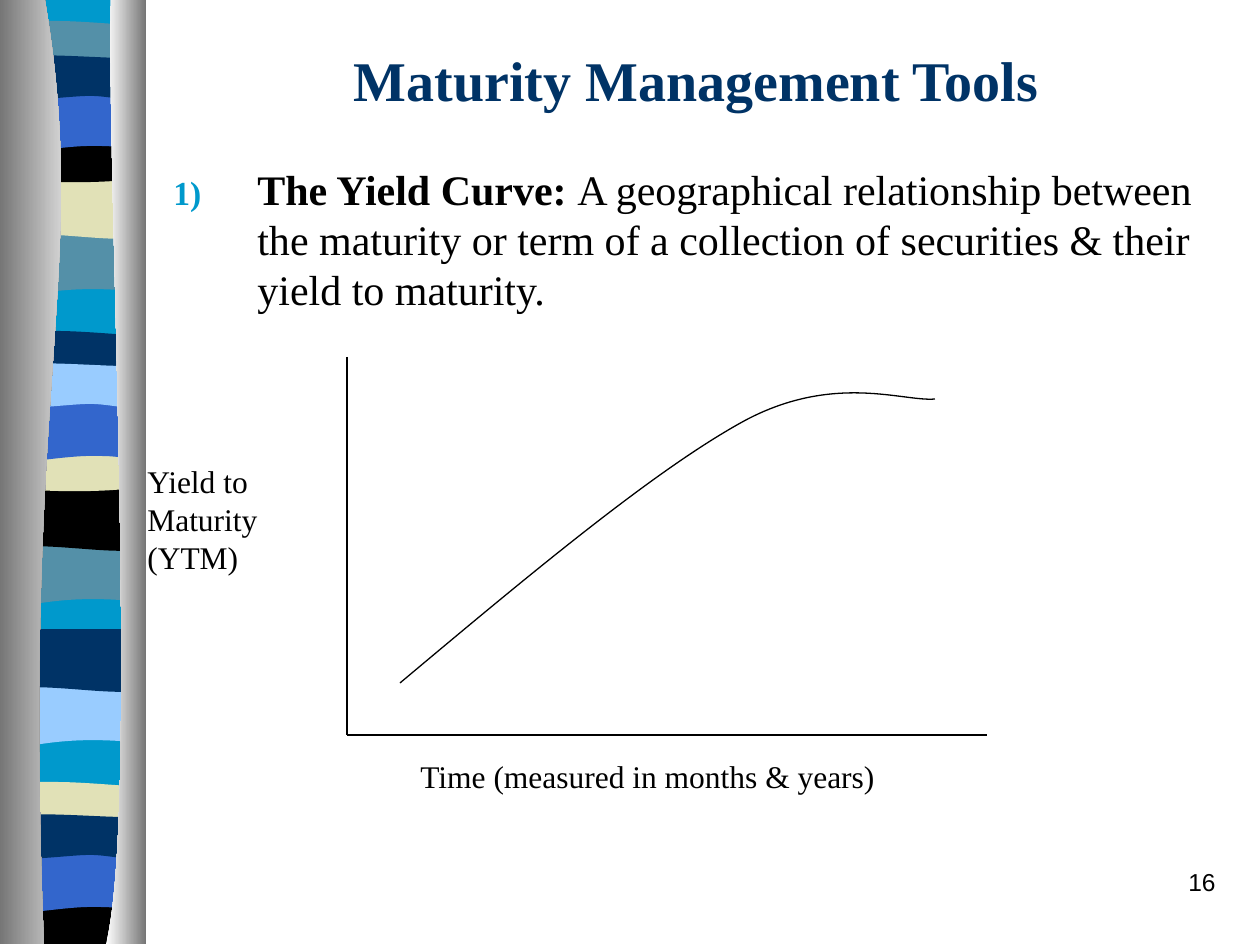
from lxml import etree
from pptx import Presentation
from pptx.dml.color import RGBColor
from pptx.enum import shapes, text
from pptx.oxml import ns
from pptx.util import Pt

PX = 914400 / 126
SERIF, SANS = "Times New Roman", "Arial"
COLORS = {
    "cyan": "0099CC", "teal": "5490A8", "sand": "E1E1B7", "black": "000000",
    "blue": "3366CC", "navy": "003366", "sky": "99CCFF",
    "white": "FFFFFF", "grey": "767676",
}

# Outlines start at their first point; each later item is a line end (2 numbers)
# or a Bezier piece (6 numbers).
RIBBON_WIDTH = 137
PROFILES = {
    "slant": [(137, 0), (137, 59), (43, 49, 24, 69, 0, 59), (0, 0)],
    "wave": [(137, 0), (137, 60), (114, 69, 42, 53, 0, 60), (0, 0)],
    "cap": [(137, 6), (137, 37), (114, 42, 23, 42, 0, 37), (0, 6),
            (9, 0, 29, 1, 52, 1), (75, 1, 119, 5, 137, 6)],
    "dip": [(137, 0), (137, 41), (114, 48, 23, 48, 0, 41), (0, 0),
            (84, 6, 107, 0, 137, 0)],
    "floor": [(137, 0), (137, 47), (0, 47), (0, 0), (84, 6, 107, 0, 137, 0)],
    "arch": [(137, 0), (137, 60), (115, 53, 106, 53, 84, 53),
             (61, 53, 20, 60, 0, 60), (0, 0)],
    "pillow": [(137, 6), (137, 44), (128, 52, 106, 44, 84, 44),
               (61, 44, 14, 52, 0, 44), (0, 6), (19, 0, 92, 6, 115, 6)],
}
BANDS = [
    ("slant", 233, "teal"), ("wave", 176, "sand"), ("cap", 20, "teal"),
    ("dip", 136, "black"), ("arch", 93, "blue"), ("pillow", 52, "navy"),
    ("slant", 543, "teal"), ("wave", 488, "black"), ("cap", 330, "navy"),
    ("dip", 445, "sand"), ("arch", 403, "blue"), ("pillow", 360, "sky"),
    ("slant", 684, "sky"), ("wave", 629, "navy"), ("cap", 781, "sand"),
    ("floor", 897, "black"), ("arch", 854, "blue"), ("pillow", 811, "navy"),
]
CURTAINS = [
    ([(45, 0), (91, 272, 21, 373, 44, 944), (0, 944), (0, 0)], "grey", "white"),
    ([(111, 0), (106, 158, 140, 814, 106, 944), (146, 944), (146, 0)], "white", "grey"),
]
YIELD_CURVE = [(53, 326), (182, 218, 310, 111, 399, 63),
               (488, 16, 557, 45, 588, 42)]


def px(value):
    return round(value * PX)


def rgb(name):
    return RGBColor.from_string(COLORS[name])


def bend(shape, outline):
    """Join the three line ends of each Bezier piece into one curve."""
    ends = iter(list(shape._element.iter(ns.qn("a:lnTo"))))
    for piece in outline[1:]:
        group = [next(ends) for _ in range(len(piece) // 2)]
        if len(group) == 3:
            curve = etree.Element(ns.qn("a:cubicBezTo"))
            group[0].addprevious(curve)
            for end in group:
                curve.append(end[0])
                end.getparent().remove(end)


def add_outline(page, outline, left, top, close=True):
    points = [(px(left + piece[i]), px(top + piece[i + 1]))
              for piece in outline for i in range(0, len(piece), 2)]
    builder = page.shapes.build_freeform(*points[0])
    builder.add_line_segments(points[1:], close=close)
    shape = builder.convert_to_shape()
    bend(shape, outline)
    shape.shadow.inherit = False
    shape.line.fill.background()
    return shape


def fill_solid(shape, color):
    shape.fill.solid()
    shape.fill.fore_color.rgb = rgb(color)


def add_ribbon(page, left, top, height):
    backing = [(0, 0), (RIBBON_WIDTH, 0), (RIBBON_WIDTH, height), (0, height)]
    fill_solid(add_outline(page, backing, left, top), "cyan")
    for profile, offset, color in BANDS:
        fill_solid(add_outline(page, PROFILES[profile], left, top + offset), color)


def add_curtains(page, left, top):
    for outline, start, end in CURTAINS:
        curtain = add_outline(page, outline, left, top)
        curtain.fill.gradient()
        curtain.fill.gradient_angle = 0
        for stop, color in zip(curtain.fill.gradient_stops, (start, end)):
            stop.color.rgb = rgb(color)


def style(para, size, font=SERIF, color="black", bold=None):
    para.font.size = Pt(size)
    para.font.name = font
    para.font.color.rgb = rgb(color)
    para.font.bold = bold


def add_text(page, lines, left, top, width, height, size, font=SERIF, wrap=True):
    box = page.shapes.add_textbox(px(left), px(top), px(width), px(height))
    box.text_frame.word_wrap = wrap
    box.text_frame.text = "\n".join(lines)
    for para in box.text_frame.paragraphs:
        style(para, size, font)
    return box.text_frame.paragraphs[0]


def set_title(page, words, left, top, width, height):
    title = page.shapes.title
    title.left, title.top, title.width, title.height = map(px, (left, top, width, height))
    title.text_frame.text = words
    title.text_frame.vertical_anchor = text.MSO_ANCHOR.MIDDLE
    para = title.text_frame.paragraphs[0]
    para.alignment = text.PP_ALIGN.CENTER
    style(para, 32, color="navy", bold=True)


def add_definition(page, term, meaning, left, top, width, height):
    para = add_text(page, [term], left, top, width, height, 24)
    para.runs[0].font.bold = True
    para.add_run().text = meaning
    para.space_before = Pt(3)
    props = para._p.get_or_add_pPr()
    props.set("marL", str(px(84)))
    props.set("indent", str(px(-84)))
    tint = etree.Element(ns.qn("a:buClr"))
    etree.SubElement(tint, ns.qn("a:srgbClr"), val=COLORS["cyan"])
    bullet = [tint, etree.Element(ns.qn("a:buSzPct"), val="80000"),
              etree.Element(ns.qn("a:buAutoNum"), type="arabicParenR")]
    spacing = props.find(ns.qn("a:spcBef"))
    for element in reversed(bullet):
        spacing.addnext(element)


def add_axis(page, *ends):
    axis = page.shapes.add_connector(shapes.MSO_CONNECTOR.STRAIGHT, *map(px, ends))
    axis.line.color.rgb = rgb("black")
    axis.line.width = Pt(0.75)
    etree.SubElement(axis._element.spPr, ns.qn("a:effectLst"))


def add_yield_graph(page, left, top, width, height):
    bottom = top + height
    add_axis(page, left, top, left, bottom)
    add_axis(page, left, bottom, left + width, bottom)
    curve = add_outline(page, YIELD_CURVE, left, top, close=False)
    curve.fill.background()
    curve.line.color.rgb = rgb("black")
    curve.line.width = Pt(0.75)
    add_text(page, ["Time (measured in months & years)"],
             left + 61, bottom + 16, 481, 50, 18, wrap=False)
    add_text(page, ["Yield to", "Maturity", "(YTM)"],
             left - 212, top + 99, 136, 126, 18, wrap=False)


def add_page_number(page, number, left, top, width, height):
    para = add_text(page, [number], left, top, width, height, 14, SANS)
    para.alignment = text.PP_ALIGN.RIGHT
    para.space_before = Pt(2)


def main():
    deck = Presentation()
    deck.slide_width, deck.slide_height = px(1260), px(945)
    page = deck.slides.add_slide(deck.slide_layouts[5])
    add_ribbon(page, 6, 0, 942)
    add_curtains(page, 0, 0)
    add_page_number(page, "16", 966, 861, 262, 63)
    set_title(page, "Maturity Management Tools", 161, 32, 1071, 94)
    add_definition(page, "The Yield Curve: ",
                   "A geographical relationship between the maturity or term of a "
                   "collection of securities & their yield to maturity.",
                   161, 157, 1071, 683)
    add_yield_graph(page, 347, 357, 640, 378)
    deck.save("out.pptx")


if __name__ == "__main__":
    main()
